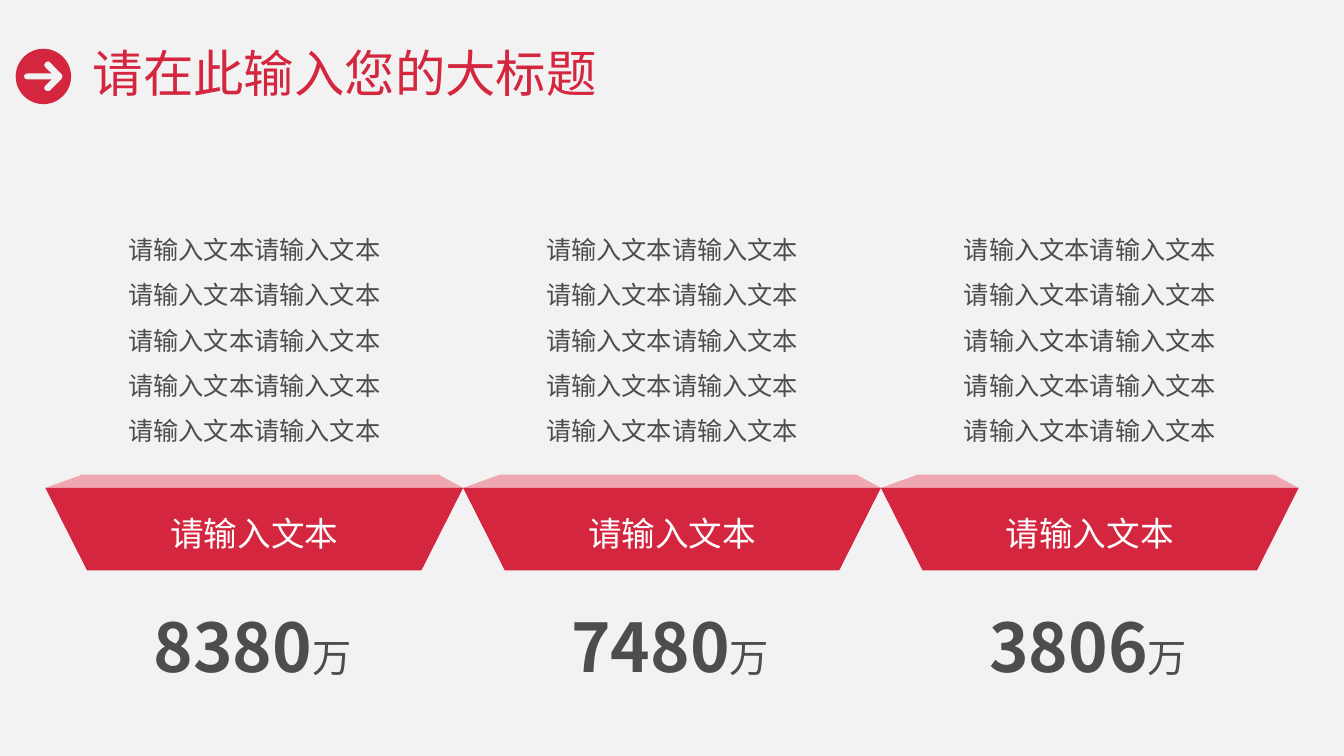
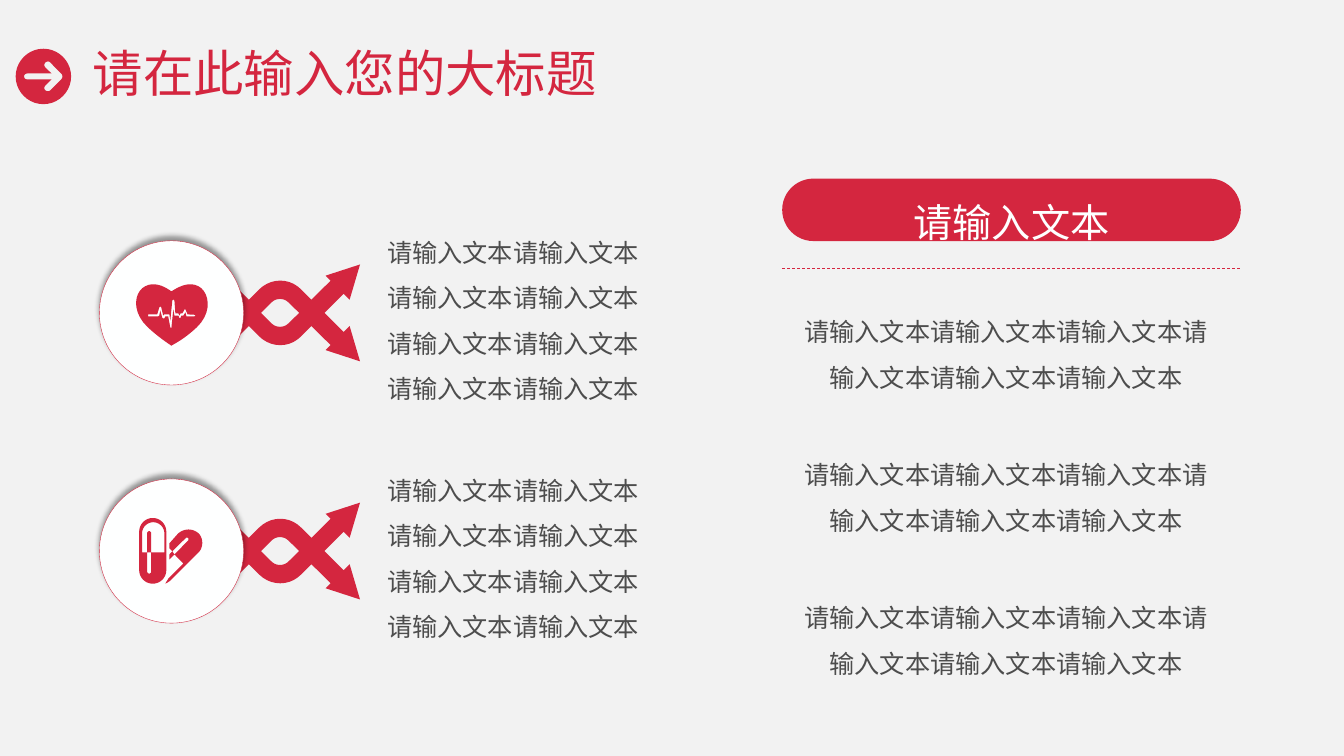
"""Build two red-themed slides: three trays with figures, and two icon rows beside a text column."""
from lxml import etree
from pptx import Presentation
from pptx.dml.color import RGBColor
from pptx.enum.dml import MSO_LINE
from pptx.enum.shapes import MSO_CONNECTOR, MSO_SHAPE
from pptx.enum.text import MSO_ANCHOR, PP_ALIGN
from pptx.oxml.ns import qn
from pptx.util import Pt

LEFT, CENTER = PP_ALIGN.LEFT, PP_ALIGN.CENTER
TOP, MIDDLE = MSO_ANCHOR.TOP, MSO_ANCHOR.MIDDLE
OVAL, PILL = MSO_SHAPE.OVAL, MSO_SHAPE.ROUNDED_RECTANGLE
STRAIGHT, DASH = MSO_CONNECTOR.STRAIGHT, MSO_LINE.DASH

FONT = "Noto Sans CJK SC"
COLORS = {"red": "D4263F", "pink": "EFA7B1", "gray": "4D4D4D",
          "page": "F2F2F2", "white": "FFFFFF", "disc": "FEFFFF", "black": "000000"}
WIDE, HIGH = 960, 540

TITLE = "请在此输入您的大标题"
LABEL = "请输入文本"
FIGURES = ["8380", "7480", "3806"]
UNIT = "万"
TRAY_TEXT, ROW_TEXT, SIDE_TEXT = LABEL * 10, LABEL * 8, LABEL * 6

STEP = 298.4
EDGE = (WIDE - 3 * STEP) / 2
ROWS = [223.5, 393.6]
SIDE, SIDE_W = 558.7, 327.6

# Each outline is a list of points; six numbers make a Bezier curve.
ARROW = [(34.3, 43.9), (33.6, 43.9, 32.9, 44.2, 32.4, 44.7),
         (31.4, 45.7, 31.4, 47.1, 32.4, 48.1), (36.8, 52.5), (19.4, 52.5),
         (18.2, 52.5, 17.2, 53.4, 17.2, 54.6), (17.2, 55.8, 18.2, 56.7, 19.4, 56.7),
         (36.8, 56.7), (32.4, 61.1), (31.4, 62.1, 31.4, 63.5, 32.4, 64.5),
         (33.5, 65.4, 35, 65.4, 36, 64.5), (44, 56.4),
         (44.8, 55.4, 44.8, 53.8, 44, 52.8), (36, 44.7),
         (35.5, 44.2, 35, 43.9, 34.3, 43.9)]
DISC = [(31, 34.8), (41.9, 34.8, 50.8, 43.7, 50.8, 54.6),
        (50.8, 65.5, 41.9, 74.4, 31, 74.4), (20.1, 74.4, 11.2, 65.5, 11.2, 54.6),
        (11.2, 43.7, 20.1, 34.8, 31, 34.8)]
TWIST = [(231.8, 0), (245.5, -13.7), (249.8, -9.4), (257.2, -34.6), (232.6, -26.6),
         (236.2, -23), (222.5, -9.4), (215.3, -16.6), (207, -25.2, 193.5, -25.2, 185, -16.6),
         (177.8, -9.4), (162, -25.2), (152.6, -15.8), (168.5, 0)]
EYE = [(213.8, 0), (206.2, -7.4), (202.8, -10.8, 197.3, -10.8, 193.9, -7.4), (186.5, 0)]
HEART = [(103.7, 204.5), (111.6, 200.2, 120.2, 206.6, 122.4, 208.1),
         (125.3, 206.6, 133.9, 200.2, 141.8, 204.5), (149, 208.1, 152.6, 222.5, 140.4, 234),
         (130.3, 243.4, 123.1, 246.2, 122.4, 247), (121.7, 246.2, 115.2, 242.6, 105.8, 234),
         (92.9, 221.8, 96.5, 208.1, 103.7, 204.5)]
PULSE = [(105.8, 226.1), (113, 226.1), (113.8, 225.4), (114.5, 221.8), (115.9, 226.8),
         (116.6, 227.5), (117.4, 227.5), (118.1, 226.1), (120.2, 226.1), (121.7, 234),
         (122.4, 234.7), (123.8, 221), (124.6, 225.4), (127.4, 225.4), (128.2, 227.2),
         (128.9, 227.2), (129.6, 225.4), (131, 225.4), (132.5, 223.2), (133.2, 226.1),
         (139, 226.1), (139.7, 224.9), (134, 224.6), (132.5, 221), (131.8, 221),
         (130.3, 223.9), (128.9, 223.9), (128.2, 225.4), (127.4, 223.9), (125.3, 223.9),
         (124.6, 214.6), (123.8, 213.8), (123.1, 214.6), (121.7, 229), (121, 224.6),
         (117.4, 224.6), (116.6, 225.4), (115.2, 219.6), (114.5, 218.9), (113.8, 219.6),
         (112.3, 224.6), (105.8, 224.6)]
HALF_PILL = [(141.8, 394.6), (122.4, 414), (121, 415.4, 119.5, 416.2, 118.1, 416.9),
             (118.8, 415.4, 119.5, 414.7, 120.2, 413.3), (131, 402.5), (124.6, 396),
             (134.6, 385.9), (134.6, 384.5), (133.9, 383.8, 133.2, 383.8, 132.5, 384.5),
             (123.1, 393.8), (121, 391.7), (121, 388.1), (127.4, 380.9),
             (131.8, 377.3, 137.5, 377.3, 141.8, 380.9),
             (145.4, 384.5, 145.4, 391, 141.8, 394.6)]
CHIP = [(121, 399.6), (121, 396), (123.1, 393.8), (124.6, 396)]
SHELL = [(109.1, 416.9), (103.8, 416.9, 99.4, 412.6, 99.4, 407.2), (99.4, 379.8),
         (99.4, 374.4, 103.8, 370, 109.1, 370), (114.5, 370, 118.8, 374.4, 118.8, 379.8),
         (118.8, 407.2), (118.8, 412.6, 114.5, 416.9, 109.1, 416.9)]
CAVITY = [(117.4, 380.9), (117.4, 376.6, 113.8, 373, 109.4, 373),
          (105.1, 373, 101.5, 376.6, 101.5, 380.9), (101.5, 394.6), (105.1, 394.6),
          (105.1, 408.2), (105.1, 409, 105.8, 409.7, 106.6, 409.7),
          (107.3, 409.7, 108, 409, 108, 408.2), (108, 394.6), (117.4, 394.6)]
SLOT = [(105.1, 394.6), (105.1, 380.9), (105.1, 380.2, 105.8, 379.4, 106.6, 379.4),
        (107.3, 379.4, 108, 380.2, 108, 380.9), (108, 394.6)]
ICONS = [[HEART, PULSE], [HALF_PILL, CHIP, SHELL, CAVITY, SLOT]]


def color(name):
    return RGBColor.from_string(COLORS[name])


def trace(marks, parts=10):
    dots = []
    for mark in marks:
        if len(mark) == 2:
            dots.append(mark)
            continue
        ends = [dots[-1], mark[:2], mark[2:4], mark[4:]]
        for i in range(1, parts + 1):
            t = i / parts
            mix = ((1 - t) ** 3, 3 * t * (1 - t) ** 2, 3 * t * t * (1 - t), t ** 3)
            dots.append(tuple(sum(m * e[k] for m, e in zip(mix, ends)) for k in (0, 1)))
    return dots


def mirror(marks):
    half = trace(marks)
    return half + [(x, -y) for x, y in reversed(half[1:-1])]


def paint(shape, fill):
    shape.shadow.inherit = False
    shape.fill.solid()
    shape.fill.fore_color.rgb = color(fill)
    shape.line.fill.background()
    return shape


def draw(slide, loops, fill, left=0, top=0):
    pen = None
    for loop in loops:
        dots = [(Pt(x + left), Pt(y + top)) for x, y in trace(loop)]
        if pen is None:
            pen = slide.shapes.build_freeform(*dots[0])
        else:
            pen.move_to(*dots[0])
        pen.add_line_segments(dots[1:], close=True)
    return paint(pen.convert_to_shape(), fill)


def style(run, size, ink, bold=False):
    font = run.font
    font.size, font.bold, font.name = Pt(size), bold, FONT
    font.color.rgb = color(ink)
    etree.SubElement(font._element, qn("a:ea"), typeface=FONT)


def write(shape, text, size, ink, space=1.5, align=CENTER, anchor=MIDDLE):
    frame = shape.text_frame
    frame.text, frame.word_wrap, frame.vertical_anchor = text, True, anchor
    line = frame.paragraphs[0]
    line.alignment, line.line_spacing = align, space
    style(line.runs[0], size, ink)
    return line


def add_text(slide, box, text, size=18, **look):
    shape = slide.shapes.add_textbox(*map(Pt, box))
    return write(shape, text, size, "gray", **look)


def add_slide(deck, layout):
    slide = deck.slides.add_slide(layout)
    write(slide.shapes.title, TITLE, 36, "red", 0.9, LEFT)
    return slide


def add_tray(slide, left, figure):
    draw(slide, [[(26.4, 339), (280.8, 339), (STEP, 348.5), (0, 348.5)]], "pink", left)
    front = draw(slide, [[(0, 348.5), (STEP, 348.5), (STEP - 29.8, 407.5), (29.8, 407.5)]],
                 "red", left)
    write(front, LABEL, 24, "white", 1.2)
    add_text(slide, (left + 46, 152.6, 206.6, 170), TRAY_TEXT)
    line = add_text(slide, (left + 43.4, 429, 209, 65.5), figure, 48, space=1, anchor=TOP)
    line.runs[0].font.bold = True
    unit = line.add_run()
    unit.text = UNIT
    style(unit, 28, "gray")


def add_row(slide, mid, icon):
    draw(slide, [mirror(EYE), mirror(TWIST)], "red", top=mid)
    disc = paint(slide.shapes.add_shape(OVAL, Pt(71), Pt(mid - 51.5), Pt(103), Pt(103)), "disc")
    disc.line.color.rgb = color("red")
    disc.line.width = Pt(0.25)
    glow = etree.SubElement(disc.element.spPr.find(qn("a:effectLst")), qn("a:outerShdw"),
                            blurRad=str(Pt(4)), dist=str(Pt(3)), dir="16200000", rotWithShape="0")
    tint = etree.SubElement(glow, qn("a:srgbClr"), val=COLORS["black"])
    etree.SubElement(tint, qn("a:alpha"), val="40000")
    draw(slide, icon, "red")
    add_text(slide, (263.5, mid - 81.7, 206, 163.4), ROW_TEXT)


def add_side(slide):
    head = slide.shapes.add_shape(PILL, Pt(SIDE), Pt(127.6), Pt(SIDE_W), Pt(44.6))
    head.adjustments[0] = 0.5
    write(paint(head, "red"), LABEL, 28, "disc")
    rule = slide.shapes.add_connector(STRAIGHT, Pt(SIDE), Pt(191.5), Pt(SIDE + SIDE_W), Pt(191.5))
    rule.line.color.rgb = color("red")
    rule.line.width, rule.line.dash_style = Pt(0.5), DASH
    etree.SubElement(rule.element.spPr, qn("a:effectLst"))
    for i in range(3):
        add_text(slide, (SIDE, 201.6 + 102.2 * i, 319.7, 92.2), SIDE_TEXT)


def main():
    deck = Presentation()
    deck.slide_width, deck.slide_height = Pt(WIDE), Pt(HIGH)
    back = deck.slide_master.background.fill
    back.solid()
    back.fore_color.rgb = color("page")
    layout = deck.slide_layouts[5]
    title = layout.placeholders[0]
    title.left, title.top, title.width, title.height = map(Pt, (59, 20.9, 790.6, 67))

    trays = add_slide(deck, layout)
    badge = draw(trays, [ARROW, DISC], "red")
    layout.shapes.element.append(badge.element)
    for i, figure in enumerate(FIGURES):
        add_tray(trays, EDGE + i * STEP, figure)

    rows = add_slide(deck, layout)
    for mid, icon in zip(ROWS, ICONS):
        add_row(rows, mid, icon)
    add_side(rows)
    deck.save("out.pptx")


if __name__ == "__main__":
    main()
